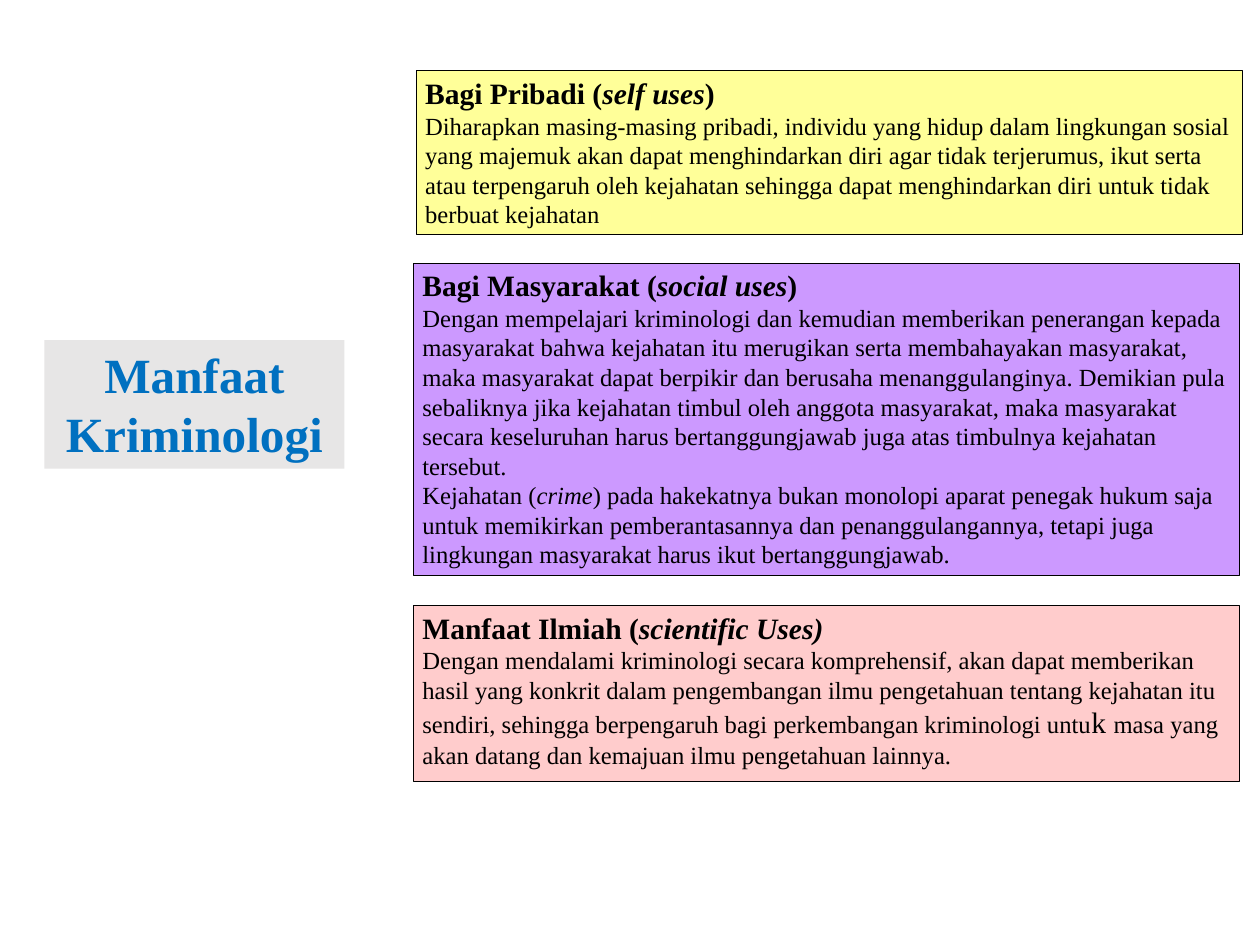
import pptx
import pptx.util
import pptx.dml.color
import pptx.enum.shapes
import pptx.enum.text
from dataclasses import dataclass

Pt = pptx.util.Pt


@dataclass(frozen=True)
class Theme:
    font: str = "Times New Roman"
    title: int = 40
    head: int = 24
    body: int = 20
    ink: str = "000000"
    blue: str = "0070C0"
    gray: str = "E7E6E6"
    yellow: str = "FFFF99"
    purple: str = "CC99FF"
    pink: str = "FFCCCC"
    edge: float = 0.75


theme = Theme()
BODY = (theme.body, False, False)
TERM = (theme.body, False, True)
HEAD = (theme.head, True, False)
USE = (theme.head, True, True)
LARGE = (theme.head, False, False)

PANELS = [
    ((338.4, 57.6, 671, 133.2), theme.yellow, [
        [("Bagi Pribadi (", HEAD), ("self uses", USE), (")", HEAD)],
        [("Diharapkan masing-masing pribadi, individu yang hidup dalam lingkungan sosial "
          "yang majemuk akan dapat menghindarkan diri agar tidak terjerumus, ikut serta "
          "atau terpengaruh oleh kejahatan sehingga dapat menghindarkan diri untuk tidak "
          "berbuat kejahatan", BODY)],
    ]),
    ((336.2, 213.8, 671, 254.2), theme.purple, [
        [("Bagi Masyarakat (", HEAD), ("social uses", USE), (")", HEAD)],
        [("Dengan mempelajari kriminologi dan kemudian memberikan penerangan kepada "
          "masyarakat bahwa kejahatan itu merugikan serta membahayakan masyarakat, "
          "maka masyarakat dapat berpikir dan berusaha menanggulanginya. Demikian pula "
          "sebaliknya jika kejahatan timbul oleh anggota masyarakat, maka masyarakat "
          "secara keseluruhan harus bertanggungjawab juga atas timbulnya kejahatan "
          "tersebut.", BODY)],
        [("Kejahatan (", BODY), ("crime", TERM),
         (") pada hakekatnya bukan monolopi aparat penegak hukum saja "
          "untuk memikirkan pemberantasannya dan penanggulangannya, tetapi juga "
          "lingkungan masyarakat harus ikut bertanggungjawab.", BODY)],
    ]),
    ((336.2, 491.8, 671, 143.2), theme.pink, [
        [("Manfaat Ilmiah (", HEAD), ("scientific Uses)", USE)],
        [("Dengan mendalami kriminologi secara komprehensif, akan dapat memberikan "
          "hasil yang konkrit dalam pengembangan ilmu pengetahuan tentang kejahatan itu "
          "sendiri, sehingga berpengaruh bagi perkembangan kriminologi untu", BODY),
         ("k ", LARGE),
         ("masa yang akan datang dan kemajuan ilmu pengetahuan lainnya.", BODY)],
    ]),
]


def color(code):
    return pptx.dml.color.RGBColor.from_string(code)


def add_box(slide, box, fill):
    kind = pptx.enum.shapes.MSO_SHAPE.RECTANGLE
    shape = slide.shapes.add_shape(kind, *(Pt(n) for n in box))
    shape.shadow.inherit = False
    shape.fill.solid()
    shape.fill.fore_color.rgb = color(fill)
    shape.line.fill.background()
    frame = shape.text_frame
    frame.word_wrap = True
    frame.vertical_anchor = pptx.enum.text.MSO_ANCHOR.TOP
    frame.auto_size = pptx.enum.text.MSO_AUTO_SIZE.SHAPE_TO_FIT_TEXT
    return shape


def add_text(frame, paras, align, ink):
    for pos, runs in enumerate(paras):
        para = frame.paragraphs[0] if pos == 0 else frame.add_paragraph()
        para.alignment = align
        for text, (size, bold, slant) in runs:
            run = para.add_run()
            run.text = text
            font = run.font
            font.name = theme.font
            font.size = Pt(size)
            font.bold = bold
            font.italic = slant
            font.color.rgb = color(ink)


def add_title(slide, box):
    shape = add_box(slide, box, theme.gray)
    runs = [("Manfaat Kriminologi", (theme.title, True, False))]
    add_text(shape.text_frame, [runs], pptx.enum.text.PP_ALIGN.CENTER, theme.blue)


def add_panel(slide, box, fill, paras):
    shape = add_box(slide, box, fill)
    shape.line.color.rgb = color(theme.ink)
    shape.line.width = Pt(theme.edge)
    add_text(shape.text_frame, paras, pptx.enum.text.PP_ALIGN.LEFT, theme.ink)


def main():
    deck = pptx.Presentation()
    deck.slide_width = Pt(1024)
    deck.slide_height = Pt(768)
    slide = deck.slides.add_slide(deck.slide_layouts[6])
    add_title(slide, (36, 276.5, 244, 104.4))
    for box, fill, paras in PANELS:
        add_panel(slide, box, fill, paras)
    deck.save("out.pptx")


if __name__ == "__main__":
    main()
